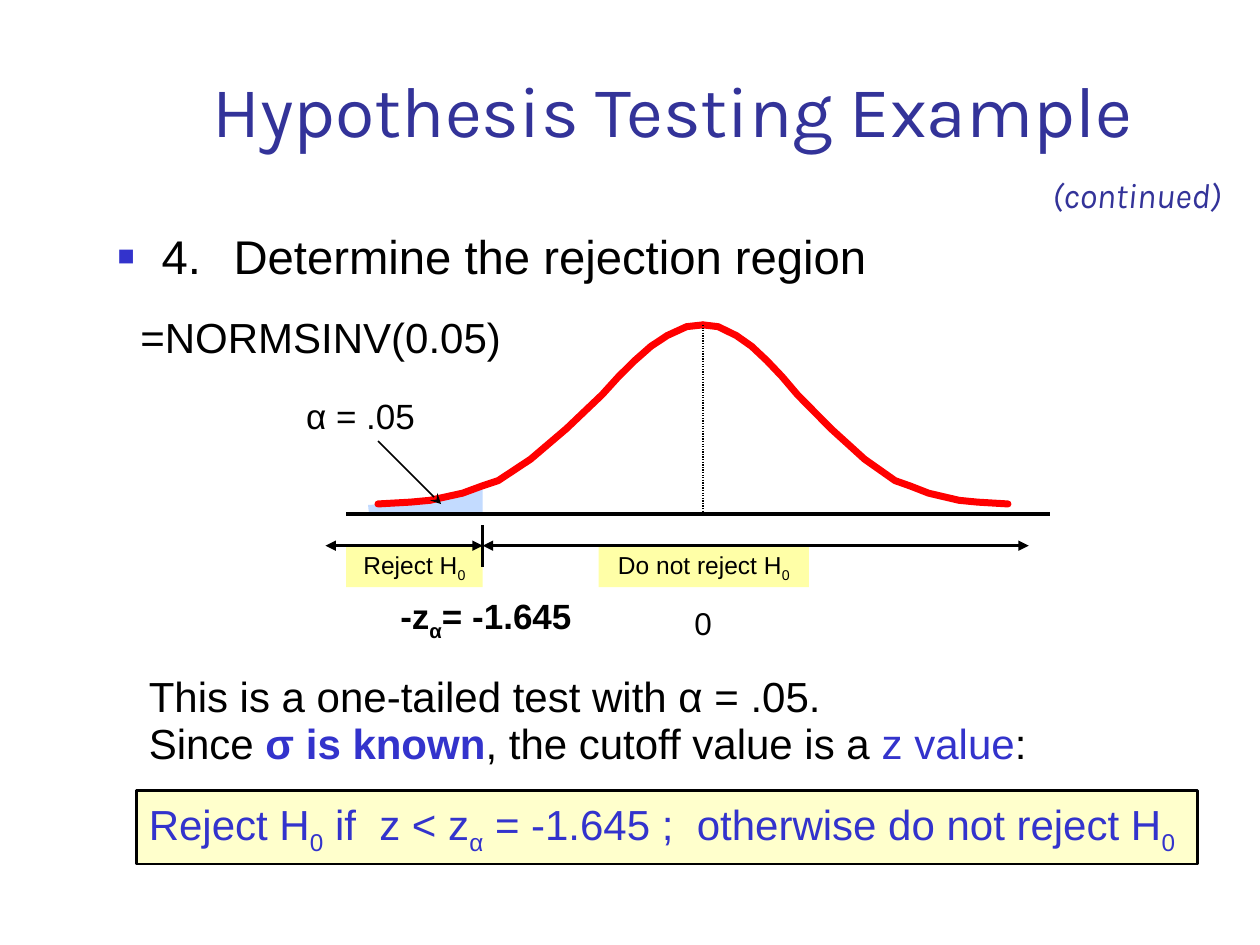
from pptx import Presentation
from pptx.dml.color import RGBColor
from pptx.enum.dml import MSO_LINE
from pptx.enum.shapes import MSO_CONNECTOR, MSO_SHAPE
from pptx.enum.text import MSO_ANCHOR, PP_ALIGN
from pptx.oxml.ns import qn
from pptx.util import Cm, Pt
from lxml.etree import SubElement

COLORS = {
    "title": "333399", "accent": "3333CC", "black": "000000", "curve": "FF0000",
    "tail": "C3DBFF", "label": "FFFFA7", "decision": "FFFFCC",
}
# Distance from the mean and drop from the peak, as fractions of one half curve
BELL = [
    (0, 0), (0.05, 0.01), (0.11, 0.06), (0.16, 0.12), (0.21, 0.2), (0.26, 0.29),
    (0.31, 0.39), (0.42, 0.58), (0.53, 0.75), (0.63, 0.87), (0.68, 0.9),
    (0.74, 0.94), (0.79, 0.96), (0.84, 0.98), (0.9, 0.99), (1, 1),
]
SUB = {"subscript": True}
ACCENT = {"color": "accent"}


def color(name):
    return RGBColor.from_string(COLORS[name])


def write(paragraph, runs, size=24, font="Arial", align=PP_ALIGN.LEFT, **style):
    """Fill a paragraph with runs, each a string or a (string, style) pair."""
    paragraph.alignment = align
    for item in runs:
        text, own = (item, {}) if isinstance(item, str) else item
        look = {**style, **own}
        run = paragraph.add_run()
        run.text = text
        run.font.name, run.font.size = font, Pt(size)
        run.font.bold = look.get("bold", False)
        run.font.italic = look.get("italic", False)
        run.font.color.rgb = color(look.get("color", "black"))
        if look.get("subscript"):
            run._r.get_or_add_rPr().set("baseline", "-25000")


def add_text(slide, box, runs, wrap=True, **style):
    shape = slide.shapes.add_textbox(*map(Cm, box))
    shape.text_frame.word_wrap = wrap
    write(shape.text_frame.paragraphs[0], runs, **style)
    return shape.text_frame


def add_box(slide, box, fill, outline=None):
    shape = slide.shapes.add_shape(MSO_SHAPE.RECTANGLE, *map(Cm, box))
    shape.shadow.inherit = False
    shape.fill.solid()
    shape.fill.fore_color.rgb = color(fill)
    if outline:
        shape.line.color.rgb = color("black")
        shape.line.width = Pt(outline)
    else:
        shape.line.fill.background()
    return shape


def add_line(slide, start, end, width, head=None, tail=None, dash=None):
    line = slide.shapes.add_connector(MSO_CONNECTOR.STRAIGHT, *map(Cm, start + end))
    line.line.color.rgb = color("black")
    line.line.width = Pt(width)
    if dash:
        line.line.dash_style = dash
    for tag, kind in (("a:headEnd", head), ("a:tailEnd", tail)):
        if kind:
            SubElement(line.line._get_or_add_ln(), qn(tag), type=kind)
    SubElement(line._element.spPr, qn("a:effectLst"))


def add_outline(slide, points, fill=None, line=None):
    """Draw a filled, closed shape or an open, stroked path."""
    first, *rest = [tuple(map(Cm, point)) for point in points]
    builder = slide.shapes.build_freeform(*first)
    builder.add_line_segments(rest, close=fill is not None)
    shape = builder.convert_to_shape()
    shape.shadow.inherit = False
    if fill:
        shape.fill.solid()
        shape.fill.fore_color.rgb = color(fill)
        shape.line.fill.background()
    else:
        shape.fill.background()
        shape.line.color.rgb = color(line)
        shape.line.width = Pt(4)
        shape.line._get_or_add_ln().set("cap", "rnd")


def add_heading(slide, left, top):
    title = slide.shapes.title
    title.left, title.top = Cm(left), Cm(top)
    title.width, title.height = Cm(21.64), Cm(2.12)
    title.text_frame.vertical_anchor = MSO_ANCHOR.BOTTOM
    write(title.text_frame.paragraphs[0], ["Hypothesis Testing Example"], size=41,
          font="Karla", align=PP_ALIGN.CENTER, color="title")
    add_text(slide, (left + 18.21, top + 2.32, 4.09, 1.09), ["(continued)"], wrap=False,
             size=20, font="Karla", color="title", italic=True)


def add_step(slide, left, top):
    frame = add_text(slide, (left, top, 22.43, 1.9), [])
    paragraph = frame.paragraphs[0]
    properties = paragraph._p.get_or_add_pPr()
    indent = Cm(0.89)
    properties.set("marL", str(indent))
    properties.set("indent", str(-indent))
    bullet_color = SubElement(properties, qn("a:buClr"))
    SubElement(bullet_color, qn("a:srgbClr"), val=COLORS["accent"])
    SubElement(properties, qn("a:buSzPct"), val="60000")
    SubElement(properties, qn("a:buFont"), typeface="Arial")
    SubElement(properties, qn("a:buChar"), char="■")
    tabs = SubElement(properties, qn("a:tabLst"))
    SubElement(tabs, qn("a:tab"), pos=str(Cm(2.34)), algn="l")
    write(paragraph, ["4. \tDetermine the rejection region"], size=27)


def add_plot(slide, left, top):
    """Draw the normal curve with its lower-tail rejection region."""
    def at(x, y):
        return left + x, top + y

    mean, cutoff, base, axis = 8.25, 3.81, 3.81, 4.45
    for x, width, text in ((1.06, 2.75, "Reject H"), (6.15, 4.24, "Do not reject H")):
        frame = add_box(slide, (*at(x, axis), width, 0.84), "label").text_frame
        frame.margin_top = frame.margin_bottom = 0
        write(frame.paragraphs[0], [text, ("0", SUB)], size=14, align=PP_ALIGN.CENTER)

    tail = [(1.52, base), (1.5, 3.63), (2.51, 3.58), (3.18, 3.4), (3.51, 3.35),
            (cutoff, 3.18), (cutoff, base)]
    add_outline(slide, [at(*point) for point in tail], fill="tail")
    for half_width in (-6.55, 6.15):
        half = [at(mean + half_width * x, 3.61 * y) for x, y in BELL]
        add_outline(slide, half, line="curve")

    add_line(slide, at(1.06, base), at(15.24, base), 2)
    add_line(slide, at(1.7, 2.34), at(2.97, 3.61), 1, tail="stealth")
    add_line(slide, at(mean, 0), at(mean, base), 0.75, dash=MSO_LINE.ROUND_DOT)
    add_line(slide, at(cutoff, 4.04), at(cutoff, 4.88), 1.5)
    for start, end in ((cutoff, 14.82), (0.64, cutoff)):
        add_line(slide, at(start, axis), at(end, axis), 1.5, "triangle", "triangle")

    add_text(slide, (*at(0, 1.27), 3.61, 1.09), ["α = .05"], size=20)
    add_text(slide, (*at(1.9, 5.31), 5, 1.09), ["-z", ("α", SUB), "= -1.645"],
             size=20, bold=True)
    add_text(slide, (*at(7.62, 5.51), 1.27, 1.02), ["0"], size=18, align=PP_ALIGN.CENTER)
    add_text(slide, (left - 3.38, top - 0.4, 7.85, 1.3), ["=NORMSINV(0.05)"], wrap=False,
             align=PP_ALIGN.CENTER)


def add_conclusion(slide, left, top):
    add_box(slide, (left, top + 2.54, 21.39, 1.48), "decision", outline=1.5)
    frame = add_text(slide, (left, top, 21.39, 3.91),
                     ["This is a one-tailed test with α = .05."])
    reason = frame.add_paragraph()
    reason.line_spacing = 0.95
    write(reason, ["Since ", ("σ is known", {"color": "accent", "bold": True}),
                   ", the cutoff value is a ", ("z value", ACCENT), ":"])
    rule = frame.add_paragraph()
    rule.space_before = Pt(17)
    write(rule, ["Reject H", ("0", SUB), " if  z < z", ("α", SUB),
                 " = -1.645 ;  otherwise do not reject H", ("0", SUB)], **ACCENT)


def main():
    presentation = Presentation()
    presentation.slide_width, presentation.slide_height = Cm(25.4), Cm(19.05)
    slide = presentation.slides.add_slide(presentation.slide_layouts[5])
    add_heading(slide, 2.75, 1.06)
    add_step(slide, 2.12, 4.45)
    add_plot(slide, 5.92, 6.55)
    add_conclusion(slide, 2.75, 13.4)
    presentation.save("out.pptx")


if __name__ == "__main__":
    main()
